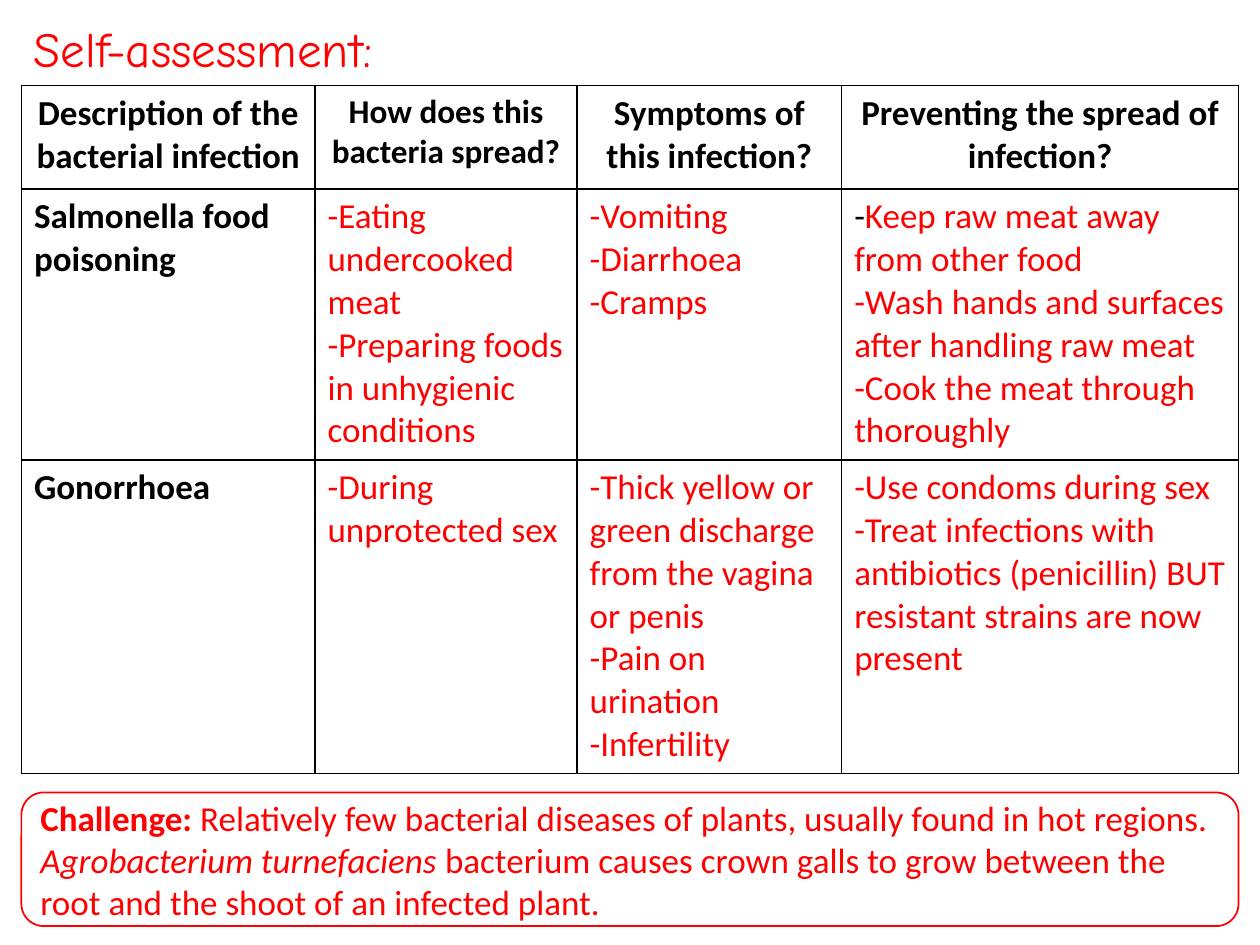
from lxml.etree import SubElement
from pptx import Presentation
from pptx.dml.color import RGBColor
from pptx.enum.shapes import MSO_SHAPE
from pptx.enum.text import MSO_ANCHOR, MSO_AUTO_SIZE, PP_ALIGN
from pptx.oxml import parse_xml
from pptx.oxml.ns import nsdecls
from pptx.util import Inches, Pt


class Theme:
    black = RGBColor(0, 0, 0)
    red = RGBColor(255, 0, 0)
    white = RGBColor(255, 255, 255)
    body, head, title = Pt(20), Pt(19), Pt(28)
    line = Pt(1)


# Text formats
base = {"name": "Calibri", "size": Theme.body, "bold": False, "italic": False}
formats = {
    "title": {**base, "name": "Comic Neue", "size": Theme.title, "color": Theme.red},
    "label": {**base, "bold": True, "color": Theme.black},
    "small": {**base, "size": Theme.head, "bold": True, "color": Theme.black},
    "dash": {**base, "color": Theme.black},
    "answer": {**base, "color": Theme.red},
    "strong": {**base, "bold": True, "color": Theme.red},
    "latin": {**base, "italic": True, "color": Theme.red},
}


def write(frame, lines, align=PP_ALIGN.LEFT):
    """Fill a frame; each line is a list of (text, format) runs."""
    for i, line in enumerate(lines):
        para = frame.add_paragraph() if i else frame.paragraphs[0]
        para.alignment = align
        for text, kind in line:
            run = para.add_run()
            run.text = text
            for key, value in formats[kind].items():
                if key == "color":
                    run.font.color.rgb = value
                else:
                    setattr(run.font, key, value)


def border(cell):
    """Draw a thin black line on all four sides of a cell."""
    props = cell._tc.get_or_add_tcPr()
    for i, side in enumerate("LRTB"):
        edge = parse_xml(f'<a:ln{side} {nsdecls("a")} w="{int(Theme.line)}"/>')
        fill = SubElement(edge, "{%s}solidFill" % edge.nsmap["a"])
        SubElement(fill, "{%s}srgbClr" % edge.nsmap["a"], val=str(Theme.black))
        props.insert(i, edge)


deck = Presentation()
deck.slide_width, deck.slide_height = Inches(10), Inches(7.5)
slide = deck.slides.add_slide(deck.slide_layouts[6])
left, width = Inches(0.17), Inches(9.66)

# Table wording: one list of lines per cell
heads = [
    [[("Description of the ", "label")], [("bacterial infection", "label")]],
    [[("How does this bacteria spread?", "small")]],
    [[("Symptoms of this infection?", "label")]],
    [[("Preventing the spread of infection?", "label")]],
]
answers = {
    "Salmonella food poisoning": [
        ["-Eating undercooked meat", "-Preparing foods in unhygienic conditions"],
        ["-Vomiting", "-Diarrhoea", "-Cramps"],
        ["-Keep raw meat away from other food",
         "-Wash hands and surfaces after handling raw meat",
         "-Cook the meat through thoroughly"],
    ],
    "Gonorrhoea": [
        ["-During unprotected sex"],
        ["-Thick yellow or green discharge from the vagina or penis",
         "-Pain on urination", "-Infertility"],
        ["-Use condoms during sex",
         "-Treat infections with antibiotics (penicillin) BUT "
         "resistant strains are now present"],
    ],
}
rows = [heads]
for name, cells in answers.items():
    rows.append([[[(name, "label")]]]
                + [[[(text, "answer")] for text in cell] for cell in cells])
# The first prevention tip opens with a black dash
rows[1][3][0] = [("-", "dash"), ("Keep raw meat away from other food", "answer")]

# Table
table = slide.shapes.add_table(3, 4, left, Inches(0.68), width, Inches(5.45)).table
table.first_row = table.horz_banding = False
for col, size in zip(table.columns, (2.33, 2.08, 2.1, 3.15)):
    col.width = Inches(size)
for row, size in zip(table.rows, (0.82, 2.15, 2.49)):
    row.height = Inches(size)
for r, row in enumerate(rows):
    for c, lines in enumerate(row):
        cell = table.cell(r, c)
        cell.fill.solid()
        cell.fill.fore_color.rgb = Theme.white
        border(cell)
        write(cell.text_frame, lines, PP_ALIGN.LEFT if r else PP_ALIGN.CENTER)

# Title
title = slide.shapes.add_textbox(left, Inches(0.1), Inches(3.37), Inches(0.57))
title.text_frame.word_wrap = False
title.text_frame.auto_size = MSO_AUTO_SIZE.SHAPE_TO_FIT_TEXT
write(title.text_frame, [[("Self-assessment:", "title")]])

# Challenge box
box = slide.shapes.add_shape(
    MSO_SHAPE.ROUNDED_RECTANGLE, left, Inches(6.29), width, Inches(1.06))
box.shadow.inherit = False
box.fill.solid()
box.fill.fore_color.rgb = Theme.white
box.line.color.rgb = Theme.red
box.line.width = Theme.line
box.text_frame.word_wrap = True
box.text_frame.vertical_anchor = MSO_ANCHOR.MIDDLE
write(box.text_frame, [[
    ("Challenge:", "strong"),
    (" Relatively few bacterial diseases of plants, usually found in hot regions. ",
     "answer"),
    ("Agrobacterium turnefaciens ", "latin"),
    ("bacterium causes crown galls to grow between the root and the shoot "
     "of an infected plant.", "answer"),
]])

deck.save("out.pptx")
